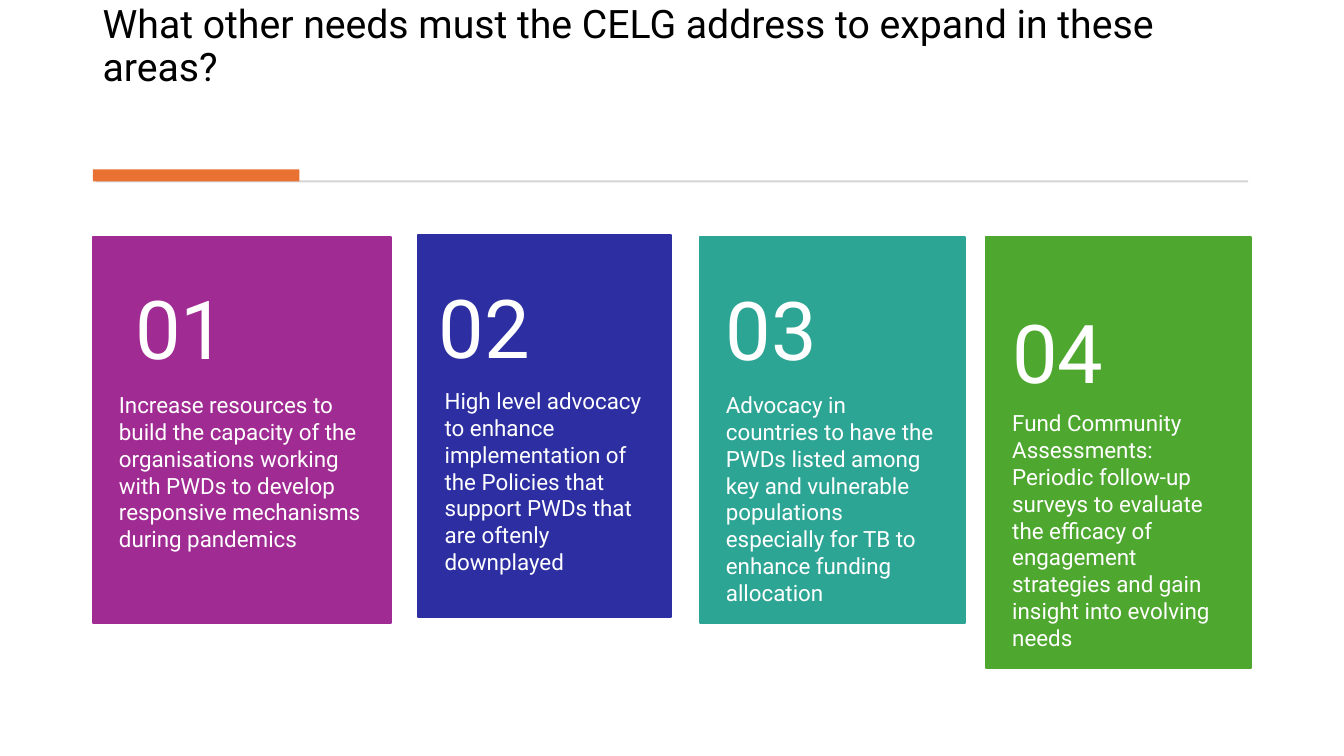
import pptx
import pptx.util
import pptx.dml.color
import pptx.enum.shapes
import pptx.enum.text

Inches = pptx.util.Inches
Anchor = pptx.enum.text.MSO_ANCHOR

TITLE = "What other needs must the CELG address to expand in these areas?"
CARDS = [
    dict(number="01", color="A02B93", box=(0.92, 2.35, 2.96, 3.83),
         number_at=(1.08, 2.68), body_top=3.88,
         body="Increase resources to build the capacity of the organisations "
              "working with PWDs to develop responsive mechanisms during pandemics"),
    dict(number="02", color="2C2EA2", box=(4.15, 2.33, 2.51, 3.79),
         number_at=(4.09, 2.67), body_top=3.84,
         body="High level advocacy to enhance implementation of the Policies "
              "that support PWDs that are oftenly downplayed"),
    dict(number="03", color="2DA594", box=(6.94, 2.35, 2.63, 3.83),
         number_at=(6.94, 2.69), body_top=3.88,
         body="Advocacy in countries to have the PWDs listed among key and "
              "vulnerable populations especially for TB to enhance funding allocation"),
    dict(number="04", color="4EA72E", box=(9.78, 2.35, 2.63, 4.28),
         number_at=(9.78, 2.91), body_top=4.06,
         body="Fund Community Assessments: Periodic follow-up surveys to evaluate "
              "the efficacy of engagement strategies and gain insight into evolving needs"),
]
THEME = dict(font="Roboto", title="000000", on_card="FFFFFF", rule="D5D5D5",
             accent="E97132", title_size=28, number_size=58, body_size=16)
NUMBER_SIZE = (2.63, 1.26)


def rgb(name):
    return pptx.dml.color.RGBColor.from_string(name)


def add_block(slide, box, color, outlined=False):
    shape = slide.shapes.add_shape(
        pptx.enum.shapes.MSO_SHAPE.RECTANGLE, *map(Inches, box))
    shape.shadow.inherit = False
    shape.fill.solid()
    shape.fill.fore_color.rgb = rgb(color)
    if outlined:
        shape.line.color.rgb = rgb(color)
        shape.line.width = pptx.util.Pt(1.5)
    else:
        shape.line.fill.background()


def add_text(slide, box, text, size, color, anchor, insets, spacing=1.0):
    frame = slide.shapes.add_textbox(*map(Inches, box)).text_frame
    frame.word_wrap = True
    frame.vertical_anchor = anchor
    (frame.margin_left, frame.margin_top,
     frame.margin_right, frame.margin_bottom) = map(Inches, insets)
    paragraph = frame.paragraphs[0]
    paragraph.text = text
    paragraph.line_spacing = spacing
    paragraph.font.name = THEME["font"]
    paragraph.font.size = pptx.util.Pt(size)
    paragraph.font.color.rgb = rgb(color)


def add_card(slide, card):
    left, top, width, height = card["box"]
    body_top = card["body_top"]
    add_block(slide, card["box"], card["color"], outlined=True)
    add_text(slide, (left, body_top, width, top + height - body_top), card["body"],
             THEME["body_size"], THEME["on_card"], Anchor.TOP, (0.26, 0, 0.26, 0.36))
    add_text(slide, card["number_at"] + NUMBER_SIZE, card["number"],
             THEME["number_size"], THEME["on_card"], Anchor.MIDDLE,
             (0.26, 0.18, 0.26, 0.18), 0.9)


def main():
    presentation = pptx.Presentation()
    presentation.slide_width = Inches(13.33)
    presentation.slide_height = Inches(7.5)
    slide = presentation.slides.add_slide(presentation.slide_layouts[6])
    add_text(slide, (0.92, 0.28, 11.49, 1.11), TITLE, THEME["title_size"],
             THEME["title"], Anchor.BOTTOM, (0.1, 0, 0.1, 0.5), 0.9)
    add_block(slide, (0.95, 1.79, 11.43, 0.02), THEME["rule"])
    add_block(slide, (0.92, 1.68, 2.05, 0.12), THEME["accent"])
    for card in CARDS:
        add_card(slide, card)
    presentation.save("out.pptx")


if __name__ == "__main__":
    main()
